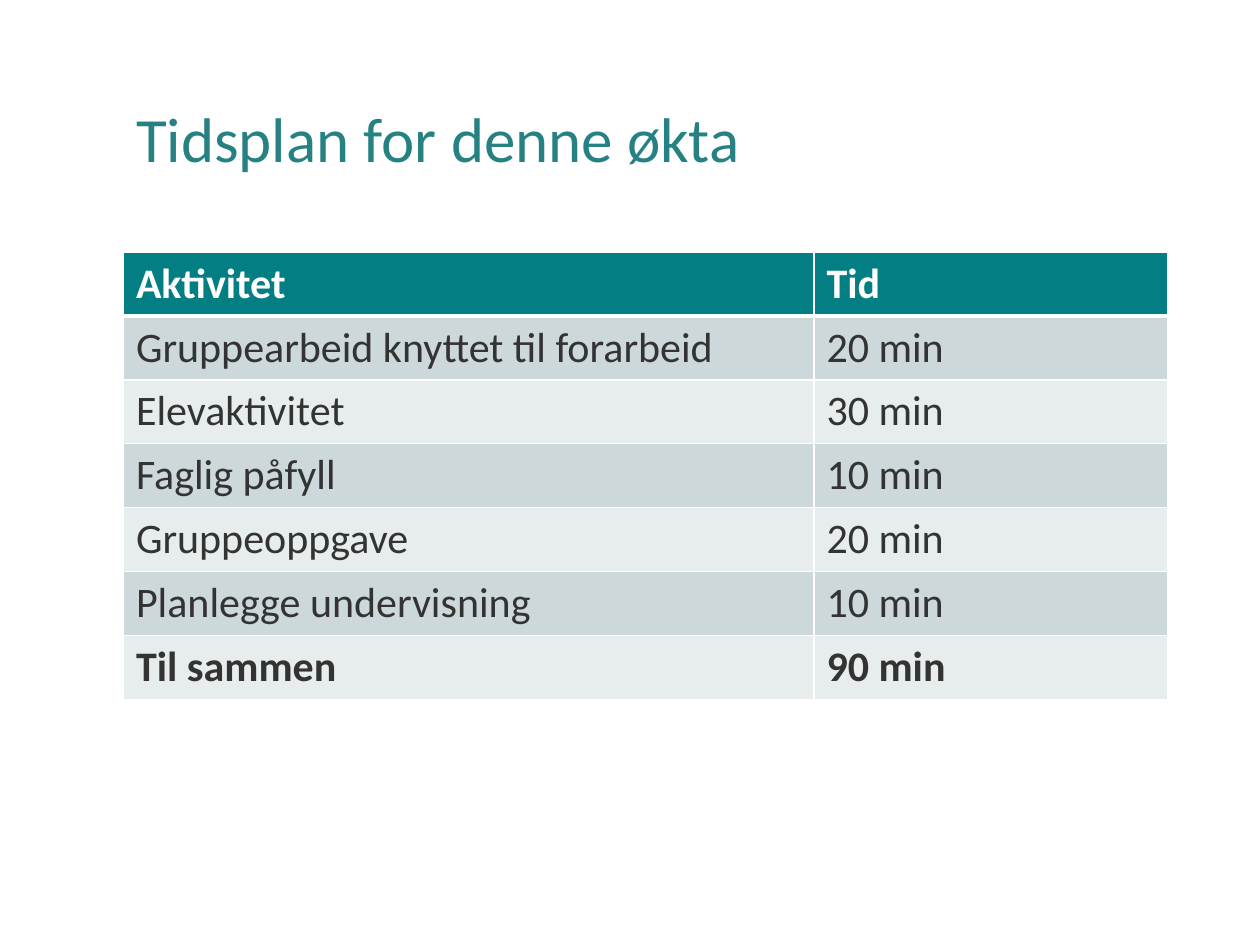
"""Build a slide with the time plan of a teaching session."""
from pptx import Presentation
from pptx.dml.color import RGBColor
from pptx.enum.text import MSO_ANCHOR, PP_ALIGN
from pptx.oxml import parse_xml
from pptx.oxml.ns import nsdecls
from pptx.util import Inches, Pt

COLORS = {
    "title": "268183",
    "header": "037F83",
    "odd": "CCD8D9",
    "even": "E7ECED",
    "text": "333333",
    "white": "FFFFFF",
}
SCHEDULE = [
    ("Aktivitet", "Tid"),
    ("Gruppearbeid knyttet til forarbeid", "20 min"),
    ("Elevaktivitet", "30 min"),
    ("Faglig påfyll", "10 min"),
    ("Gruppeoppgave", "20 min"),
    ("Planlegge undervisning", "10 min"),
    ("Til sammen", "90 min"),
]
LEFT, WIDTH = Inches(0.98), Inches(8.29)


def format_font(font, color, **values):
    for name, value in {"name": "Calibri", **values}.items():
        setattr(font, name, value)
    font.color.rgb = RGBColor.from_string(COLORS[color])


def add_borders(cell, widths):
    properties = cell._tc.get_or_add_tcPr()
    for side, width in widths.items():
        properties.append(parse_xml(
            f'<a:ln{side} {nsdecls("a")} w="{Pt(width)}"><a:solidFill>'
            f'<a:srgbClr val="{COLORS["white"]}"/></a:solidFill></a:ln{side}>'))


deck = Presentation()
deck.slide_width, deck.slide_height = Inches(10), Inches(7.5)
page = deck.slides.add_slide(deck.slide_layouts[5])

title = page.shapes.title
title.left, title.top, title.width, title.height = LEFT, Inches(0.4), WIDTH, Inches(1.45)
title.text_frame.text = "Tidsplan for denne økta"
title.text_frame.vertical_anchor = MSO_ANCHOR.MIDDLE
para = title.text_frame.paragraphs[0]
para.alignment = PP_ALIGN.LEFT
para.line_spacing = 0.9
format_font(para.runs[0].font, "title", size=Pt(36))

row_height = Inches(0.41)
table = page.shapes.add_table(
    len(SCHEDULE), 2, LEFT, Inches(2), WIDTH, row_height * len(SCHEDULE)).table
for column, width in zip(table.columns, (5.48, 2.81)):
    column.width = Inches(width)

last = len(SCHEDULE) - 1
for row, texts in enumerate(SCHEDULE):
    fill = "header" if row == 0 else "odd" if row % 2 else "even"
    borders = {"L": 1, "R": 1, "T": 3 if row == 1 else 1, "B": 3 if row == 0 else 1}
    for column, text in enumerate(texts):
        cell = table.cell(row, column)
        add_borders(cell, borders)
        cell.fill.solid()
        cell.fill.fore_color.rgb = RGBColor.from_string(COLORS[fill])
        cell.text = text
        span = cell.text_frame.paragraphs[0].runs[0]
        format_font(span.font, "text" if row else "white", size=Pt(24), bold=row in (0, last))

deck.save("out.pptx")
